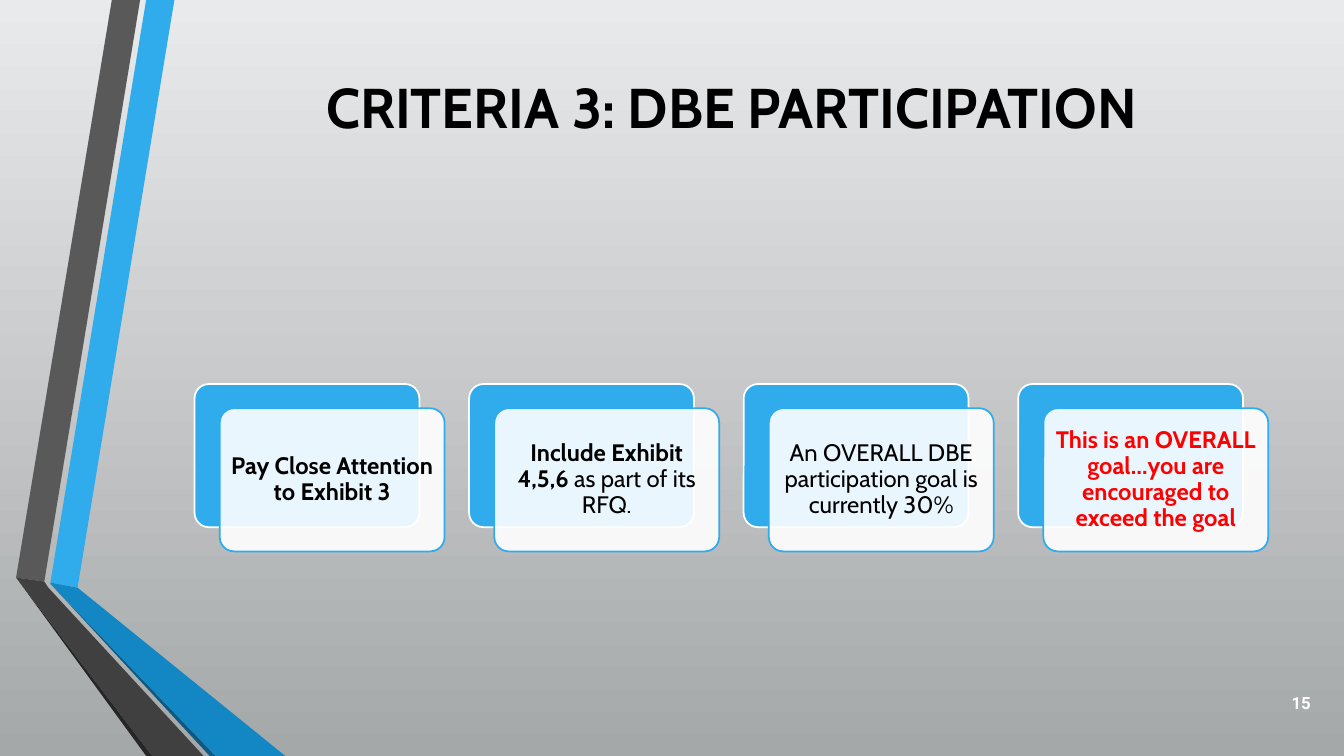
from dataclasses import dataclass
from lxml.etree import SubElement as Sub
from pptx import Presentation
from pptx.dml.color import RGBColor as RGB
from pptx.enum.shapes import MSO_SHAPE as Kind
from pptx.enum.text import MSO_ANCHOR as Anchor, PP_ALIGN as Align
from pptx.oxml.ns import qn
from pptx.util import Inches, Pt


@dataclass
class Theme:
    blue: str = "30ACEC"
    white: str = "FFFFFF"
    black: str = "000000"
    red: str = "FF0000"
    top: str = "E9EAEB"
    base: str = "A5A8A9"
    font: str = "Cabin"
    digit: str = "Roboto"
    head: int = 40
    body: int = 17
    small: int = 12
    edge: float = 1.25


theme = Theme()


def paint(shape, fill, line=None):
    shape.shadow.inherit = False
    shape.fill.solid()
    shape.fill.fore_color.rgb = RGB.from_string(fill)
    if line:
        shape.line.color.rgb = RGB.from_string(line)
        shape.line.width = Pt(theme.edge)
    else:
        shape.line.fill.background()


def write(shape, runs, size, color, align, anchor, face=theme.font, gap=0.9):
    frame = shape.text_frame
    frame.word_wrap = True
    frame.vertical_anchor = anchor
    para = frame.paragraphs[0]
    para.alignment = align
    para.line_spacing = gap
    for text, bold in runs:
        run = para.add_run()
        run.text = text
        run.font.name = face
        run.font.size = Pt(size)
        run.font.bold = bold
        run.font.color.rgb = RGB.from_string(color)


deck = Presentation()
deck.slide_width = Inches(13.33)
deck.slide_height = Inches(7.5)
slide = deck.slides.add_slide(deck.slide_layouts[6])
shapes = slide.shapes

back = slide.background.fill
back.gradient()
back.gradient_angle = 270
for stop, tint in zip(back.gradient_stops, (theme.top, theme.base)):
    stop.color.rgb = RGB.from_string(tint)

bands = [
    (theme.blue, [(0.5, 5.78), (0.77, 5.83), (1.73, 0), (1.45, 0)]),
    ("595959", [(1.39, 0), (1.11, 0), (0.16, 5.73), (0.44, 5.77)]),
    ("262626", [(0.16, 5.73), (1.45, 7.5), (1.51, 7.5)]),
    ("0C5A82", [(0.5, 5.79), (2.08, 7.5), (2.14, 7.5)]),
    ("1287C3", [(0.5, 5.78), (0.5, 5.79), (2.14, 7.5), (2.83, 7.5), (0.77, 5.83)]),
    ("404040", [(0.16, 5.73), (1.51, 7.5), (2.02, 7.5), (0.48, 5.83), (0.44, 5.77)]),
]
for tint, spots in bands:
    first, *rest = [(Inches(x), Inches(y)) for x, y in spots]
    pen = shapes.build_freeform(*first)
    pen.add_line_segments(rest, close=True)
    paint(pen.convert_to_shape(), tint)

title = shapes.add_textbox(Inches(1.93), Inches(0.75), Inches(10.65), Inches(1.92))
write(title, [("CRITERIA 3: DBE PARTICIPATION", True)],
      theme.head, theme.black, Align.CENTER, Anchor.TOP)

cards = [
    (theme.black, [("Pay Close Attention to Exhibit 3", True)]),
    (theme.black, [("Include Exhibit 4,5,6 ", True), ("as part of its RFQ.", False)]),
    (theme.black, [("An OVERALL DBE participation goal is currently 30%", False)]),
    (theme.red, [("This is an OVERALL goal…you are encouraged to exceed the goal", True)]),
]
wide, high = Inches(2.23), Inches(1.42)
for i, (color, runs) in enumerate(cards):
    left = 1.93 + i * 2.723
    rear = shapes.add_shape(Kind.ROUNDED_RECTANGLE, Inches(left), Inches(3.81), wide, high)
    front = shapes.add_shape(Kind.ROUNDED_RECTANGLE, Inches(left + 0.25), Inches(4.05), wide, high)
    rear.adjustments[0] = front.adjustments[0] = 0.1
    paint(rear, theme.blue, theme.white)
    paint(front, theme.white, theme.blue)
    tone = front.fill._xPr.find(qn("a:solidFill"))[0]
    Sub(tone, qn("a:alpha"), val="90000")
    frame = front.text_frame
    frame.margin_left = frame.margin_right = Inches(0.07)
    frame.margin_top = frame.margin_bottom = Inches(0.07)
    write(front, runs, theme.body, color, Align.CENTER, Anchor.MIDDLE)

page = shapes.add_textbox(Inches(12.58), Inches(6.75), Inches(0.52), Inches(0.44))
write(page, [("15", True)], theme.small, theme.white, Align.RIGHT, Anchor.MIDDLE,
      theme.digit, 1.0)

deck.save("out.pptx")
